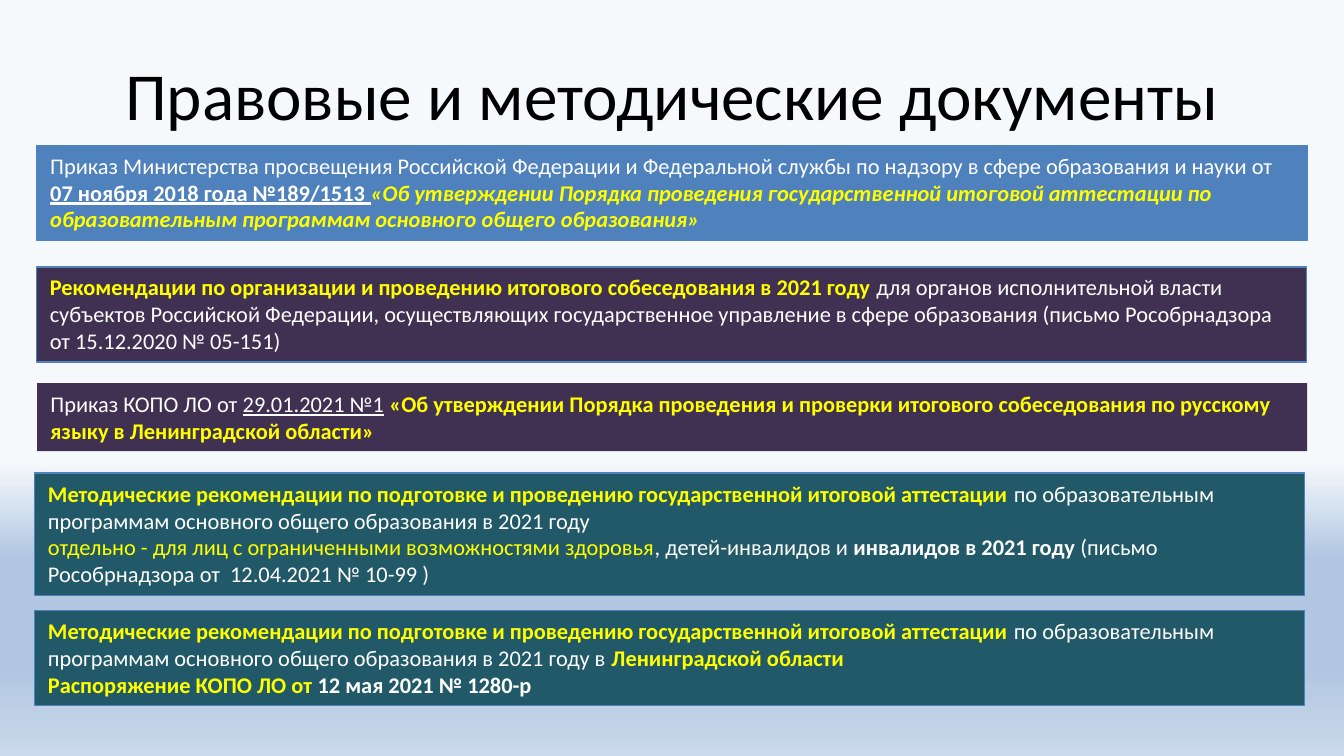
from dataclasses import dataclass

from lxml.etree import SubElement
from pptx import Presentation
from pptx.dml.color import RGBColor
from pptx.enum.shapes import MSO_SHAPE as Preset
from pptx.enum.text import MSO_ANCHOR as Anchor, PP_ALIGN as Align
from pptx.oxml.ns import qn
from pptx.slide import Slide
from pptx.util import Pt

FONT = "Calibri"
WHITE, YELLOW, BLACK = "FFFFFF", "FFFF00", "000000"
BLUE, PURPLE, TEAL = "4F81BD", "403152", "215968"
BACKDROP = [(61, "F6F9FC"), (74, "B0C6E1"), (88, "B0C6E1"), (100, "CAD9EB")]
BAND_WIDTH, LINE_HEIGHT, BAND_PADDING = 680.4, 14.6, 7.2
GUIDELINES = ("Методические рекомендации по подготовке и проведению "
              "государственной итоговой аттестации ")


@dataclass(frozen=True)
class Span:
    text: str
    color: str = WHITE
    bold: bool = False
    italic: bool = False
    underline: bool = False


@dataclass(frozen=True)
class Band:
    left: float
    top: float
    lines: int
    fill: str
    paragraphs: list[list[Span]]
    outlined: bool = True


BANDS = [
    Band(19.8, 77.8, 3, BLUE, [[
        Span("Приказ Министерства просвещения Российской Федерации и Федеральной "
             "службы по надзору в сфере образования и науки от "),
        Span("07 ноября 2018 года №189/1513 ", bold=True, underline=True),
        Span("«Об утверждении Порядка проведения государственной итоговой аттестации "
             "по образовательным программам основного общего образования»",
             YELLOW, bold=True, italic=True),
    ]]),
    Band(19.6, 143, 3, PURPLE, [[
        Span("Рекомендации по организации и проведению итогового собеседования "
             "в 2021 году ", YELLOW, bold=True),
        Span("для органов исполнительной власти субъектов Российской Федерации, "
             "осуществляющих государственное управление в сфере образования "
             "(письмо Рособрнадзора от 15.12.2020 № 05-151)"),
    ]]),
    Band(19.9, 205.3, 2, PURPLE, [[
        Span("Приказ КОПО ЛО от "),
        Span("29.01.2021 №1", underline=True),
        Span(" "),
        Span("«Об утверждении Порядка проведения и проверки итогового собеседования "
             "по русскому языку в Ленинградской области»", YELLOW, bold=True),
    ]], outlined=False),
    Band(18.6, 253.5, 4, TEAL, [
        [Span(GUIDELINES, YELLOW, bold=True),
         Span("по образовательным программам основного общего образования "
              "в 2021 году")],
        [Span("отдельно - для лиц с ограниченными возможностями здоровья", YELLOW),
         Span(", детей-инвалидов и "),
         Span("инвалидов в 2021 году ", bold=True),
         Span("(письмо Рособрнадзора от  12.04.2021 № 10-99 )")],
    ]),
    Band(18.6, 327, 3, TEAL, [
        [Span(GUIDELINES, YELLOW, bold=True),
         Span("по образовательным программам основного общего образования "
              "в 2021 году в "),
         Span("Ленинградской области", YELLOW, bold=True)],
        [Span("Распоряжение КОПО ЛО от ", YELLOW, bold=True),
         Span("12 мая 2021 № 1280-р", bold=True)],
    ]),
]


def rgb(color: str) -> RGBColor:
    return RGBColor.from_string(color)


def paint_background(slide: Slide) -> None:
    """Fill the slide with the vertical multi-stop gradient."""
    fill = slide.background.fill
    fill.gradient()
    fill.gradient_angle = 270
    stops = next(slide.element.iter(qn("a:gsLst")))
    for stop in list(stops):
        stops.remove(stop)
    for percent, color in BACKDROP:
        stop = SubElement(stops, qn("a:gs"), pos=str(percent * 1000))
        SubElement(stop, qn("a:srgbClr"), val=color)


def add_heading(slide: Slide, text: str) -> None:
    heading = slide.shapes.add_textbox(Pt(36), Pt(16.5), Pt(648), Pt(67.5))
    frame = heading.text_frame
    frame.word_wrap = True
    frame.vertical_anchor = Anchor.MIDDLE
    paragraph = frame.paragraphs[0]
    paragraph.text = text
    paragraph.alignment = Align.CENTER
    paragraph.font.name = FONT
    paragraph.font.size = Pt(36)
    paragraph.font.color.rgb = rgb(BLACK)


def add_band(slide: Slide, band: Band) -> None:
    height = band.lines * LINE_HEIGHT + BAND_PADDING
    box = slide.shapes.add_shape(Preset.RECTANGLE, Pt(band.left), Pt(band.top),
                                 Pt(BAND_WIDTH), Pt(height))
    box.shadow.inherit = False
    box.fill.solid()
    box.fill.fore_color.rgb = rgb(band.fill)
    if band.outlined:
        box.line.color.rgb = rgb(BLUE)
        box.line.width = Pt(0.75)
    else:
        box.line.fill.background()

    frame = box.text_frame
    frame.word_wrap = True
    frame.vertical_anchor = Anchor.TOP
    for index, spans in enumerate(band.paragraphs):
        paragraph = frame.add_paragraph() if index else frame.paragraphs[0]
        paragraph.alignment = Align.LEFT
        paragraph.font.name = FONT
        paragraph.font.size = Pt(12)
        for span in spans:
            run = paragraph.add_run()
            run.text = span.text
            run.font.color.rgb = rgb(span.color)
            run.font.bold = span.bold
            run.font.italic = span.italic
            run.font.underline = span.underline


def main() -> None:
    deck = Presentation()
    deck.slide_width, deck.slide_height = Pt(720), Pt(405)
    slide = deck.slides.add_slide(deck.slide_layouts[6])
    paint_background(slide)
    add_heading(slide, "Правовые и методические документы")
    for band in BANDS:
        add_band(slide, band)
    deck.save("out.pptx")


if __name__ == "__main__":
    main()
